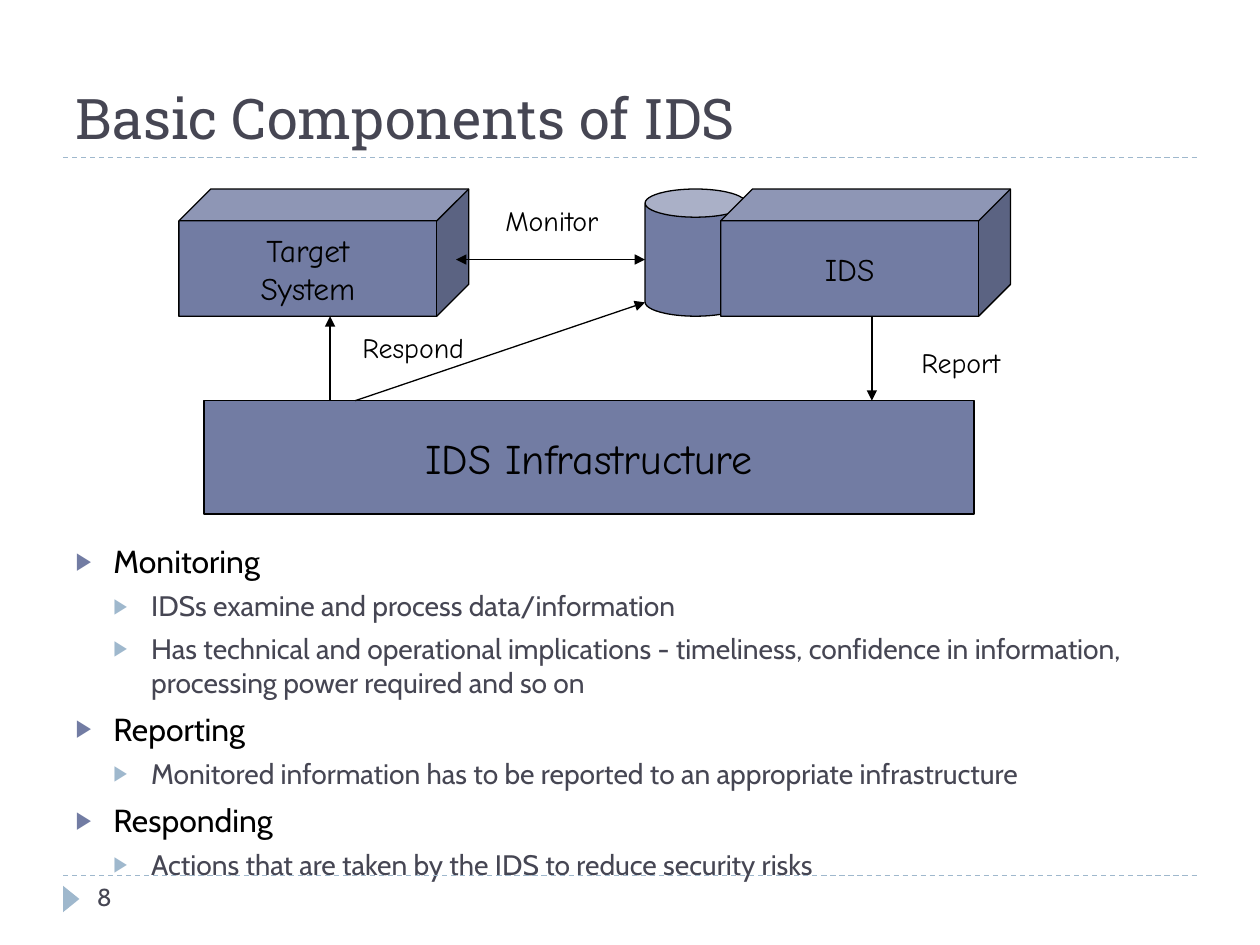
from lxml.etree import SubElement
from pptx import Presentation
from pptx.dml.color import RGBColor
from pptx.enum.dml import MSO_LINE
from pptx.enum.shapes import MSO_CONNECTOR, MSO_SHAPE
from pptx.enum.text import MSO_ANCHOR, MSO_AUTO_SIZE, PP_ALIGN
from pptx.oxml.ns import qn
from pptx.util import Inches, Pt

INK = RGBColor(0x46, 0x46, 0x53)
BLACK = RGBColor(0, 0, 0)
INDIGO = RGBColor(0x72, 0x7C, 0xA3)
SKY = RGBColor(0x9F, 0xB8, 0xCD)
HEADING, BODY, SKETCH = "Roboto Slab", "Cabin", "Comic Neue"

TITLE = "Basic Components of IDS"
PAGE = "8"
POINTS = [
    ("Monitoring", [
        "IDSs examine and process data/information",
        "Has technical and operational implications - timeliness, confidence in "
        "information, processing power required and so on",
    ]),
    ("Reporting", ["Monitored information has to be reported to an appropriate infrastructure"]),
    ("Responding", ["Actions that are taken by the IDS to reduce security risks"]),
]
LEVELS = [
    dict(size=18.2, color=BLACK, before=6, bullet=INDIGO),
    dict(size=16.1, color=INK, before=5, bullet=SKY),
]
INDENT = 0.3

TOP, BOX_HEIGHT = 1.5, 1.01
BOTTOM = TOP + BOX_HEIGHT
BASE_TOP = 3.18
STORE_LEFT = 5.12
COMPONENTS = [
    (MSO_SHAPE.RECTANGLE, (1.62, BASE_TOP, 6.11, 0.9), None, ["IDS Infrastructure"], 24),
    (MSO_SHAPE.CUBE, (1.42, TOP, 2.3, BOX_HEIGHT), 0.25, ["Target", "System"], 18),
    (MSO_SHAPE.CAN, (STORE_LEFT, TOP, 0.8, BOX_HEIGHT), 0.28, [], 18),
    (MSO_SHAPE.CUBE, (5.72, TOP, 2.3, BOX_HEIGHT), 0.25, ["IDS"], 18),
]
FLOWS = [
    ((2.62, BASE_TOP), (2.62, BOTTOM), ["tailEnd"]),
    ((STORE_LEFT, 2.06), (3.62, 2.06), ["headEnd", "tailEnd"]),
    ((2.82, BASE_TOP), (STORE_LEFT, 2.4), ["tailEnd"]),
    ((6.92, BOTTOM), (6.92, BASE_TOP), ["tailEnd"]),
]
FLOW_LABELS = [
    ("Report", (7.17, 2.69, 0.91, 0.37)),
    ("Respond", (2.75, 2.57, 1.06, 0.37)),
    ("Monitor", (3.87, 1.56, 1.02, 0.37)),
]
RULES = [6.95, 1.25]


def inches(values):
    return [Inches(value) for value in values]


def write(frame, lines, *, size, font, color=BLACK, align=PP_ALIGN.LEFT,
          anchor=MSO_ANCHOR.TOP, wrap=True, grow=False):
    frame.word_wrap = wrap
    frame.auto_size = MSO_AUTO_SIZE.SHAPE_TO_FIT_TEXT if grow else MSO_AUTO_SIZE.NONE
    frame.vertical_anchor = anchor
    for number, line in enumerate(lines):
        paragraph = frame.add_paragraph() if number else frame.paragraphs[0]
        paragraph.alignment = align
        run = paragraph.add_run()
        run.text = line
        run.font.size, run.font.name = Pt(size), font
        run.font.color.rgb = color


def add_bullet(paragraph, level):
    style = LEVELS[level]
    paragraph.level = level
    paragraph.space_before = Pt(style["before"])
    paragraph.runs[0].font.size = Pt(style["size"])
    paragraph.runs[0].font.color.rgb = style["color"]
    props = paragraph._p.get_or_add_pPr()
    props.set("marL", str(Inches(INDENT * (level + 1))))
    props.set("indent", str(Inches(-INDENT)))
    tint = SubElement(props, qn("a:buClr"))
    SubElement(tint, qn("a:srgbClr"), val=str(style["bullet"]))
    SubElement(props, qn("a:buSzPct"), val="76000")
    SubElement(props, qn("a:buChar"), char="▶")


def add_line(shapes, start, end, color, dash=None, arrows=()):
    connector = shapes.add_connector(MSO_CONNECTOR.STRAIGHT, *inches(start + end))
    connector.line.color.rgb = color
    connector.line.width = Pt(0.75)
    if dash:
        connector.line.dash_style = dash
    for arrow in arrows:
        SubElement(connector.line._get_or_add_ln(), qn(f"a:{arrow}"), type="triangle")
    SubElement(connector._element.spPr, qn("a:effectLst"))


def add_solid(shapes, kind, place, fill, outline=None):
    solid = shapes.add_shape(kind, *inches(place))
    solid.shadow.inherit = False
    solid.fill.solid()
    solid.fill.fore_color.rgb = fill
    if outline is None:
        solid.line.fill.background()
    else:
        solid.line.color.rgb = outline
        solid.line.width = Pt(0.75)
    return solid


def place_on(holder, place):
    holder.left, holder.top, holder.width, holder.height = inches(place)
    return holder.text_frame


def main():
    deck = Presentation()
    deck.slide_width, deck.slide_height = inches((10, 7.5))
    slide = deck.slides.add_slide(deck.slide_layouts[1])
    shapes = slide.shapes

    for y in RULES:
        add_line(shapes, (0.5, y), (9.5, y), SKY, dash=MSO_LINE.DASH)
    marker = add_solid(shapes, MSO_SHAPE.ISOSCELES_TRIANGLE, (0.46, 7.07, 0.21, 0.13), SKY)
    marker.rotation = 90

    write(place_on(shapes.title, (0.5, 0.17, 9, 1.08)), [TITLE],
          size=32, font=HEADING, color=INK, anchor=MSO_ANCHOR.BOTTOM)
    page = shapes.add_textbox(*inches((0.67, 6.95, 2.17, 0.4)))
    write(page.text_frame, [PAGE], size=14, font=BODY, color=INK)

    outline = [(0, topic, details) for topic, details in POINTS]
    rows = [row for level, topic, details in outline
            for row in [(level, topic)] + [(level + 1, detail) for detail in details]]
    body = place_on(slide.placeholders[1], (0.5, 4.25, 9, 2.48))
    write(body, [text for _, text in rows], size=16.1, font=BODY)
    for paragraph, (level, _) in zip(body.paragraphs, rows):
        add_bullet(paragraph, level)

    diagram = shapes.add_group_shape().shapes
    for kind, place, depth, lines, size in COMPONENTS:
        component = add_solid(diagram, kind, place, INDIGO, BLACK)
        if depth:
            component.adjustments[0] = depth
        write(component.text_frame, lines, size=size, font=SKETCH,
              align=PP_ALIGN.CENTER, anchor=MSO_ANCHOR.MIDDLE, wrap=False)
    for start, end, arrows in FLOWS:
        add_line(diagram, start, end, BLACK, arrows=arrows)
    for label, place in FLOW_LABELS:
        write(diagram.add_textbox(*inches(place)).text_frame, [label], size=16, font=SKETCH,
              align=PP_ALIGN.CENTER, anchor=MSO_ANCHOR.MIDDLE, wrap=False, grow=True)

    deck.save("out.pptx")


if __name__ == "__main__":
    main()
